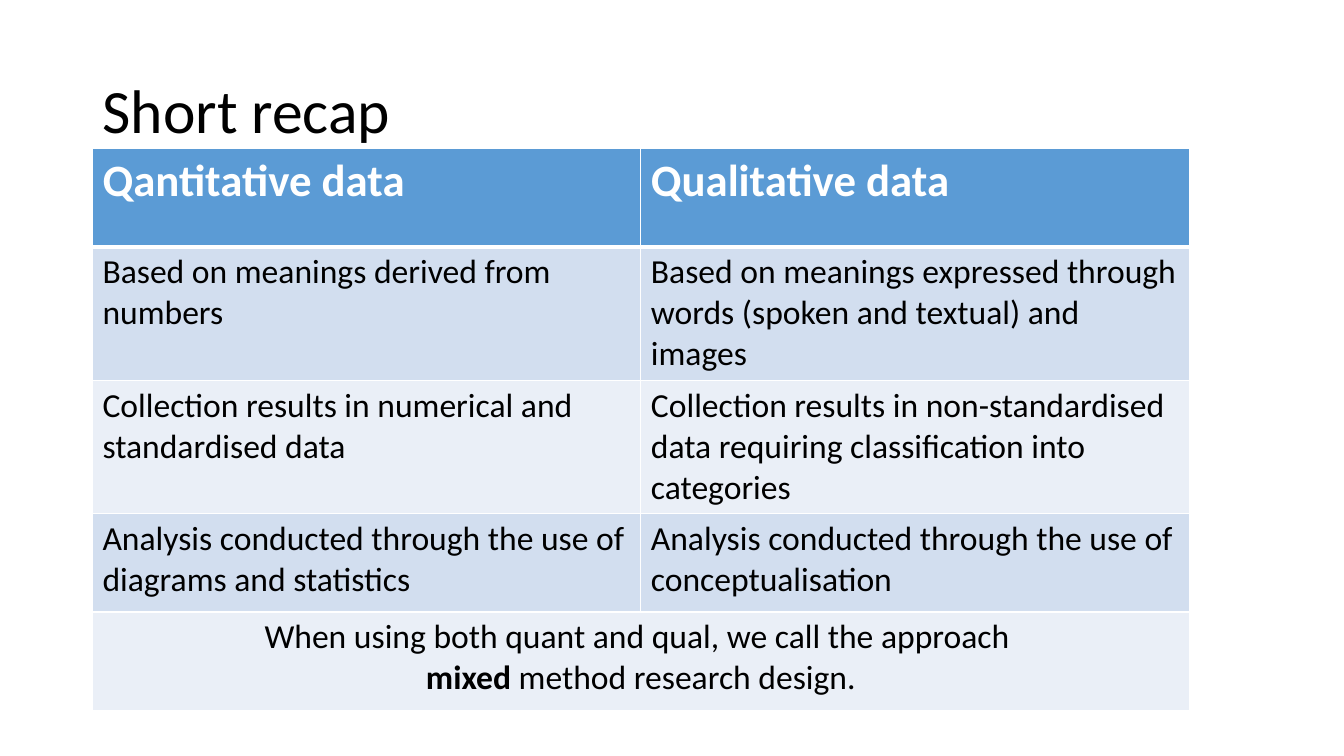
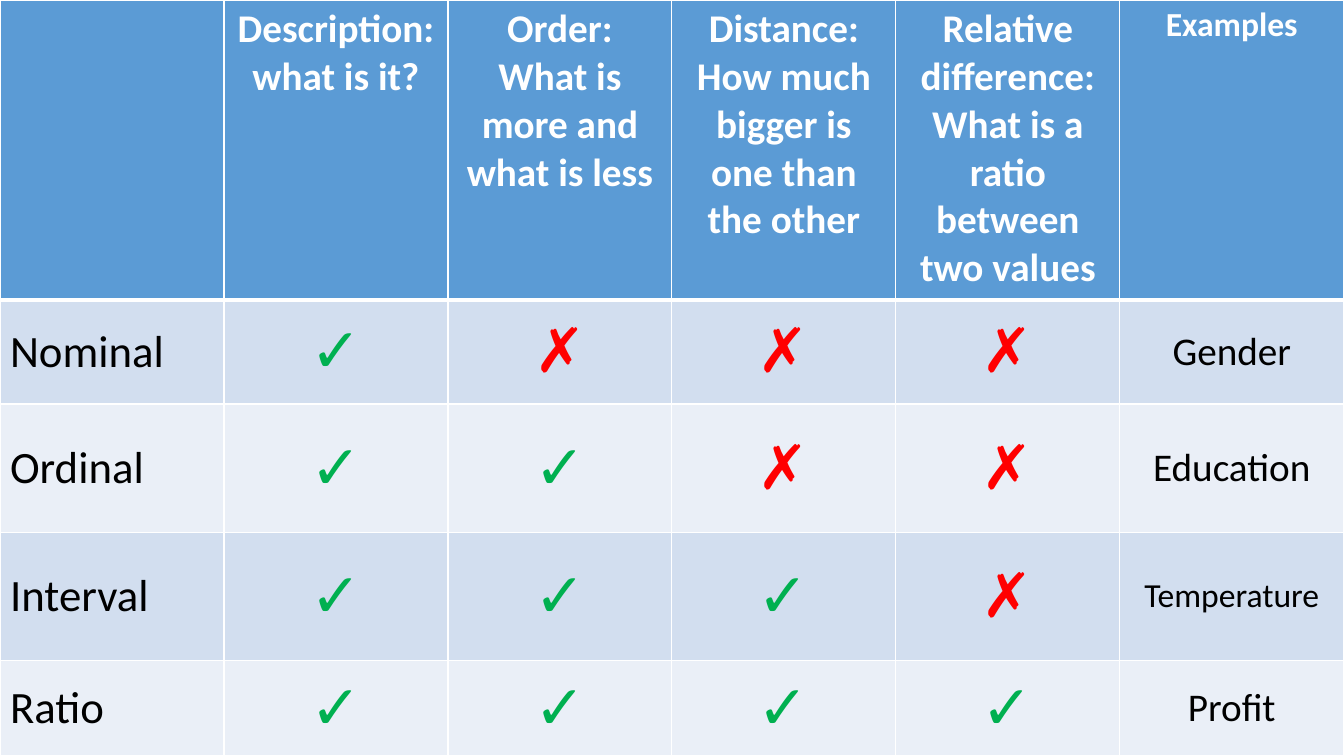
from lxml.etree import SubElement
from pptx import Presentation
from pptx.dml.color import RGBColor
from pptx.enum.text import MSO_ANCHOR, MSO_AUTO_SIZE, PP_ALIGN
from pptx.oxml.ns import qn
from pptx.util import Cm, Pt

FONT = "Calibri"
COLOURS = {
    "header": "5B9BD5",
    "band_dark": "D2DEEF",
    "band_light": "EAEFF7",
    "border": "FFFFFF",
    "header_text": "FFFFFF",
    "text": "000000",
    "yes": "00B050",
    "no": "FF0000",
}
MARKS = {"✓": "yes", "✗": "no"}
SLIDE_WIDTH, SLIDE_HEIGHT = 33.87, 19.05


def colour(name):
    return RGBColor.from_string(COLOURS[name])


class Deck:
    def __init__(self):
        self.presentation = Presentation()
        self.presentation.slide_width = Cm(SLIDE_WIDTH)
        self.presentation.slide_height = Cm(SLIDE_HEIGHT)
        self.slide = None

    def add_slide(self, title=None):
        layout = self.presentation.slide_layouts[5 if title else 6]
        self.slide = self.presentation.slides.add_slide(layout)
        if title:
            self.set_title(title)

    def set_title(self, text):
        title = self.slide.shapes.title
        title.left, title.top = Cm(2.33), Cm(1.01)
        title.width, title.height = Cm(29.21), Cm(3.68)
        frame = title.text_frame
        frame.text = text
        frame.auto_size = MSO_AUTO_SIZE.NONE
        frame.vertical_anchor = MSO_ANCHOR.MIDDLE
        heading = frame.paragraphs[0]
        heading.alignment = PP_ALIGN.LEFT
        heading.line_spacing = 0.9
        self.style_run(heading.runs[0], 44, "text")

    def add_table(self, left, top, column_widths, row_heights):
        """Add an empty table with a header row, banded rows and white rules."""
        table = self.slide.shapes.add_table(
            len(row_heights), len(column_widths), Cm(left), Cm(top),
            Cm(sum(column_widths)), Cm(sum(row_heights))).table
        table.first_row = table.horz_banding = False
        for column, width in zip(table.columns, column_widths):
            column.width = Cm(width)
        for index, (row, height) in enumerate(zip(table.rows, row_heights)):
            row.height = Cm(height)
            band = "band_dark" if index % 2 else "band_light"
            for cell in row.cells:
                self.add_borders(cell, top=3 if index == 1 else 1,
                                 bottom=3 if index == 0 else 1)
                cell.fill.solid()
                cell.fill.fore_color.rgb = colour(band if index else "header")
        return table

    def add_borders(self, cell, top, bottom):
        properties = cell._tc.get_or_add_tcPr()
        for side, points in zip("LRTB", (1, 1, top, bottom)):
            line = SubElement(properties, qn(f"a:ln{side}"), w=str(Pt(points)))
            fill = SubElement(line, qn("a:solidFill"))
            SubElement(fill, qn("a:srgbClr"), val=COLOURS["border"])

    def fill_cell(self, cell, text, size, ink="text", bold=False,
                  align=PP_ALIGN.LEFT, anchor=MSO_ANCHOR.TOP):
        """Write text into a cell; parts between ** marks become bold."""
        cell.text_frame.text = text
        cell.vertical_anchor = anchor
        for paragraph in cell.text_frame.paragraphs:
            paragraph.alignment = align
            if "**" in paragraph.text:
                parts = paragraph.text.split("**")
                paragraph.clear()
                for index, part in enumerate(parts):
                    if part:
                        run = paragraph.add_run()
                        run.text = part
                        self.style_run(run, size, ink, index % 2 == 1)
            else:
                for run in paragraph.runs:
                    self.style_run(run, size, ink, bold)

    def style_run(self, run, size, ink, bold=False):
        run.font.name = FONT
        run.font.size = Pt(size)
        run.font.bold = bold
        run.font.color.rgb = colour(ink)


def add_recap(deck):
    deck.add_slide("Short recap")
    comparison = [
        ("Qantitative data", "Qualitative data"),
        ("Based on meanings derived from numbers",
         "Based on meanings expressed through words (spoken and textual) and images"),
        ("Collection results in numerical and standardised data",
         "Collection results in non-standardised data requiring classification into categories"),
        ("Analysis conducted through the use of diagrams and statistics",
         "Analysis conducted through the use of conceptualisation"),
    ]
    conclusion = ("When using both quant and qual, we call the approach \n"
                  "**mixed** method research design.")
    table = deck.add_table(2.33, 3.74, [13.82] * 2, [2.48, 3.36, 3.36, 2.48, 2.48])
    for row, texts in enumerate(comparison):
        for column, text in enumerate(texts):
            if row == 0:
                deck.fill_cell(table.cell(row, column), text, 32, "header_text", True)
            else:
                deck.fill_cell(table.cell(row, column), text, 24)
    closing = table.cell(4, 0)
    closing.merge(table.cell(4, 1))
    deck.fill_cell(closing, conclusion, 24, align=PP_ALIGN.CENTER)


def add_measurement_levels(deck):
    deck.add_slide()
    questions = [
        "",
        "Description:\vwhat is it?",
        "Order:\nWhat is more and what is less",
        "Distance:\nHow much bigger is one than the other",
        "Relative difference:\nWhat is a ratio between two values",
        "Examples",
    ]
    levels = [
        ("Nominal", "✓✗✗✗", "Gender", 28),
        ("Ordinal", "✓✓✗✗", "Education", 28),
        ("Interval", "✓✓✓✗", "Temperature", 24),
        ("Ratio", "✓✓✓✓", "Profit", 28),
    ]
    table = deck.add_table(0, 0, [SLIDE_WIDTH / len(questions)] * len(questions),
                           [7.56, 2.62, 3.23, 3.23, 2.41])
    for column, question in enumerate(questions):
        deck.fill_cell(table.cell(0, column), question,
                       24 if question == "Examples" else 28,
                       "header_text", True, PP_ALIGN.CENTER)
    centred = {"align": PP_ALIGN.CENTER, "anchor": MSO_ANCHOR.MIDDLE}
    for row, (level, marks, example, example_size) in enumerate(levels, 1):
        deck.fill_cell(table.cell(row, 0), level, 32, anchor=MSO_ANCHOR.MIDDLE)
        for column, mark in enumerate(marks, 1):
            deck.fill_cell(table.cell(row, column), mark, 44, MARKS[mark], **centred)
        deck.fill_cell(table.cell(row, 5), example, example_size, **centred)


def main():
    deck = Deck()
    add_recap(deck)
    add_measurement_levels(deck)
    deck.presentation.save("out.pptx")


if __name__ == "__main__":
    main()
